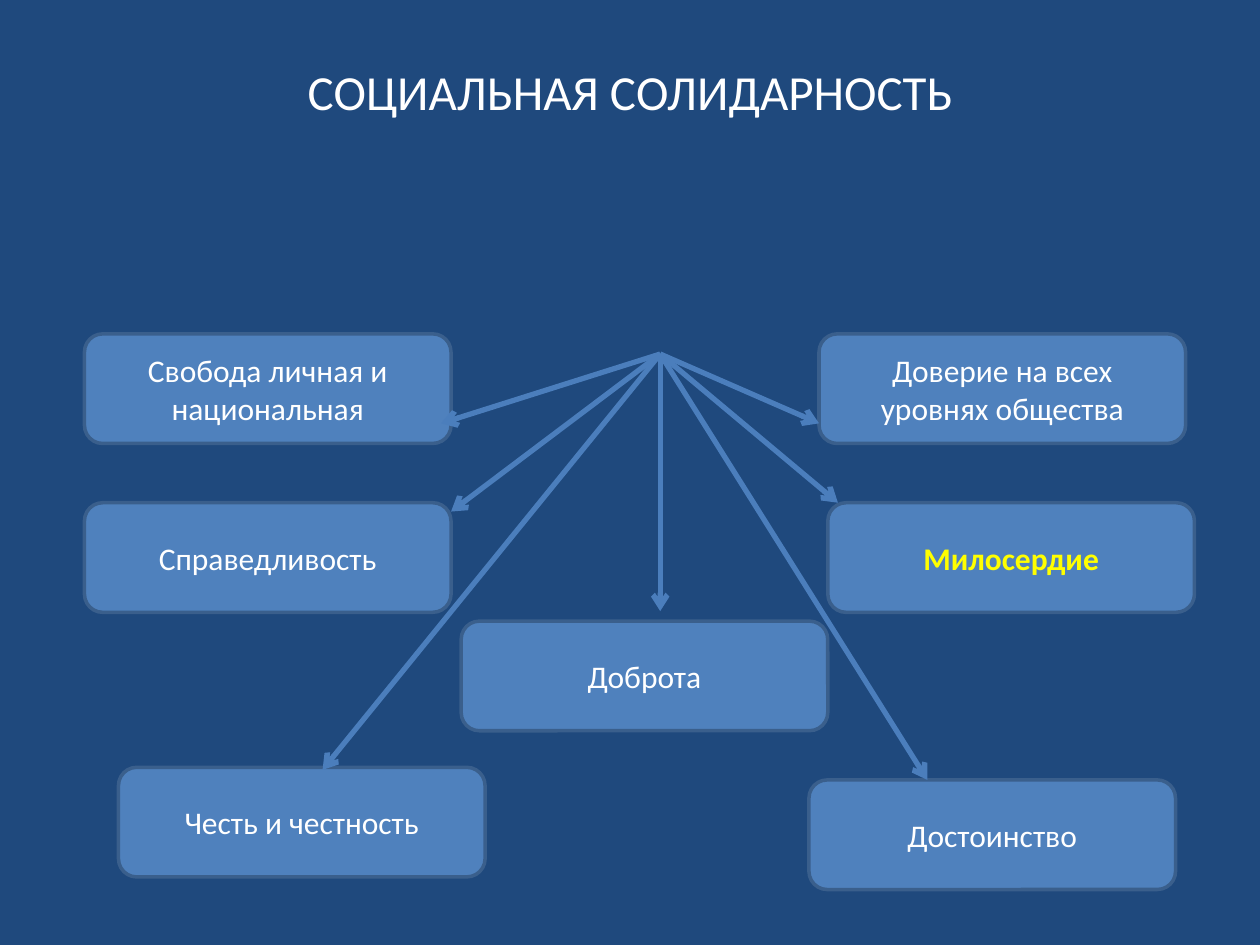
"""Build the slide on social solidarity and its values."""
from dataclasses import dataclass

from lxml import etree
from pptx import Presentation
from pptx.dml.color import RGBColor
from pptx.enum import shapes, text
from pptx.oxml.ns import qn
from pptx.util import Inches, Pt


@dataclass(frozen=True)
class Theme:
    """Colours, font and sizes of the slide."""
    back: RGBColor = RGBColor(0x1F, 0x49, 0x7D)
    box: RGBColor = RGBColor(0x4F, 0x81, 0xBD)
    border: RGBColor = RGBColor(0x3A, 0x5F, 0x8C)
    arrow: RGBColor = RGBColor(0x4B, 0x7E, 0xBC)
    white: RGBColor = RGBColor(0xFF, 0xFF, 0xFF)
    accent: RGBColor = RGBColor(0xFF, 0xFF, 0x00)
    font: str = "Calibri"
    title: Pt = Pt(28)
    label: Pt = Pt(18)
    border_width: Pt = Pt(2)
    arrow_width: Pt = Pt(3)


THEME = Theme()
BOX_SIZE = (2.91, 0.87)
HUB = (5.24, 2.81)
VALUES = [
    ("Свобода личная и национальная", (0.67, 2.65), (3.5, 3.36)),
    ("Справедливость", (0.67, 3.99), (3.58, 4.06)),
    ("Милосердие", (6.57, 3.99), (6.65, 3.99)),
    ("Доверие на всех уровнях общества", (6.5, 2.65), (6.5, 3.36)),
    ("Доброта", (3.66, 4.93), (5.24, 4.85)),
    ("Достоинство", (6.42, 6.19), (7.36, 6.19)),
    ("Честь и честность", (0.94, 6.09), (2.56, 6.11)),
]
HIGHLIGHT = "Милосердие"


def write_text(sp, words, size, color, bold=False):
    """Put centred, wrapped text into a shape."""
    tf = sp.text_frame
    tf.word_wrap = True
    tf.vertical_anchor = text.MSO_ANCHOR.MIDDLE
    p = tf.paragraphs[0]
    p.alignment = text.PP_ALIGN.CENTER
    r = p.add_run()
    r.text = words
    for name, value in {"name": THEME.font, "size": size, "bold": bold}.items():
        setattr(r.font, name, value)
    r.font.color.rgb = color


def add_title(s, words, box):
    """Add the heading within the given box."""
    sp = s.shapes.add_textbox(*map(Inches, box))
    write_text(sp, words, THEME.title, THEME.white)


def add_value(s, words, box, highlighted):
    """Add one rounded value box, highlighted or plain."""
    sp = s.shapes.add_shape(shapes.MSO_SHAPE.ROUNDED_RECTANGLE, *map(Inches, box))
    sp.shadow.inherit = False
    sp.fill.solid()
    sp.fill.fore_color.rgb = THEME.box
    sp.line.color.rgb = THEME.border
    sp.line.width = THEME.border_width
    color = THEME.accent if highlighted else THEME.white
    write_text(sp, words, THEME.label, color, highlighted)


def add_arrow(s, start, end):
    """Add an open-headed arrow between two points."""
    cn = s.shapes.add_connector(
        shapes.MSO_CONNECTOR.STRAIGHT, *map(Inches, (*start, *end)))
    cn.line.color.rgb = THEME.arrow
    cn.line.width = THEME.arrow_width
    ln = cn.line._get_or_add_ln()
    etree.SubElement(ln, qn("a:tailEnd"), type="arrow")
    etree.SubElement(cn._element.spPr, qn("a:effectLst"))


def add_values(s):
    """Add the value boxes and the arrows fanning out to them."""
    for words, corner, _ in VALUES:
        add_value(s, words, (*corner, *BOX_SIZE), words == HIGHLIGHT)
    for _, _, tip in VALUES:
        add_arrow(s, HUB, tip)


def main():
    """Create the presentation and save it."""
    prs = Presentation()
    prs.slide_width, prs.slide_height = Inches(10), Inches(7.5)
    s = prs.slides.add_slide(prs.slide_layouts[6])
    s.background.fill.solid()
    s.background.fill.fore_color.rgb = THEME.back
    add_title(s, "СОЦИАЛЬНАЯ СОЛИДАРНОСТЬ", (0.5, 0.3, 9, 0.85))
    add_values(s)
    prs.save("out.pptx")


if __name__ == "__main__":
    main()
